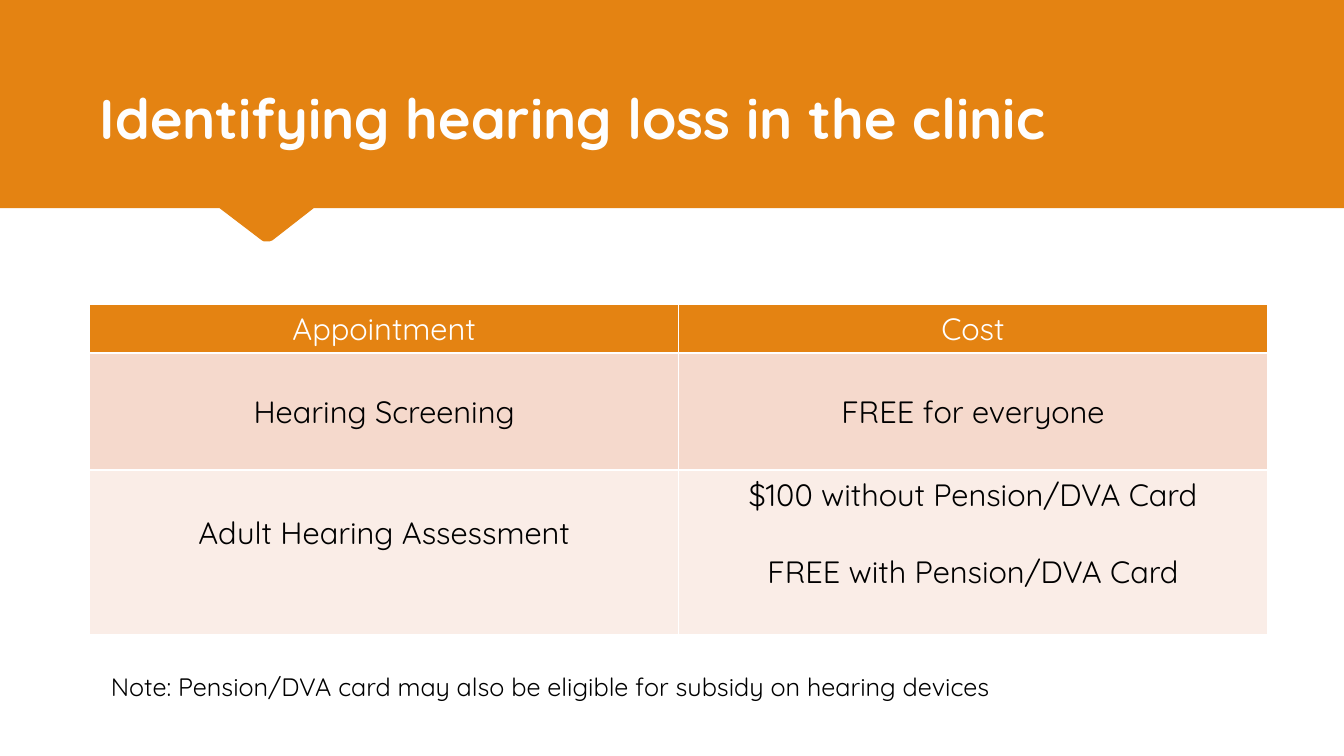
from dataclasses import dataclass

from pptx import Presentation
from pptx.dml.color import RGBColor
from pptx.enum.text import MSO_ANCHOR, MSO_AUTO_SIZE, PP_ALIGN
from pptx.slide import Slide
from pptx.table import _Cell
from pptx.text.text import _Paragraph
from pptx.util import Inches, Pt

ORANGE = RGBColor(0xE4, 0x83, 0x12)
PEACH = RGBColor(0xF5, 0xD9, 0xCC)
BLUSH = RGBColor(0xFA, 0xED, 0xE7)
WHITE = RGBColor(0xFF, 0xFF, 0xFF)
OFF_WHITE = RGBColor(0xFE, 0xFE, 0xFE)
BLACK = RGBColor(0x00, 0x00, 0x00)
FONT = "Quicksand"
LINE_GAP = Pt(27.5)

BANNER_OUTLINE = [
    (0, 0), (0, 2.06), (2.18, 2.06), (2.6, 2.38), (2.62, 2.39),
    (2.67, 2.39), (2.7, 2.38), (3.11, 2.06), (13.33, 2.06),
]


@dataclass(frozen=True)
class PriceRow:
    appointment: str
    cost: str
    height: float
    fill: RGBColor
    color: RGBColor = BLACK
    bottom_margin: float = 0.05


PRICE_ROWS = [
    PriceRow("Appointment", "Cost", 0.48, ORANGE, WHITE),
    PriceRow("Hearing Screening", "FREE for everyone", 1.16, PEACH),
    PriceRow(
        "Adult Hearing Assessment",
        "$100 without Pension/DVA Card\nFREE with Pension/DVA Card",
        1.63, BLUSH, bottom_margin=0.42,
    ),
]


def format_runs(paragraph: _Paragraph, size: float, color: RGBColor, bold: bool = False) -> None:
    for run in paragraph.runs:
        run.font.name = FONT
        run.font.size = Pt(size)
        run.font.bold = bold
        run.font.color.rgb = color


def add_banner(slide: Slide) -> None:
    builder = slide.shapes.build_freeform(Inches(13.33), 0)
    builder.add_line_segments([(Inches(x), Inches(y)) for x, y in BANNER_OUTLINE])
    banner = builder.convert_to_shape()
    banner.shadow.inherit = False
    banner.fill.solid()
    banner.fill.fore_color.rgb = ORANGE
    banner.line.color.rgb = ORANGE
    banner.line.width = Pt(0.75)
    slide.shapes.title.element.addprevious(banner.element)


def fill_title(slide: Slide) -> None:
    title = slide.shapes.title
    title.left, title.top = Inches(0.89), Inches(0.49)
    title.width, title.height = Inches(11.56), Inches(1.06)
    frame = title.text_frame
    frame.text = "Identifying hearing loss in the clinic"
    frame.auto_size = MSO_AUTO_SIZE.NONE
    frame.vertical_anchor = MSO_ANCHOR.BOTTOM
    frame.paragraphs[0].alignment = PP_ALIGN.LEFT
    format_runs(frame.paragraphs[0], 40, OFF_WHITE, bold=True)


def fill_cell(cell: _Cell, text: str, row: PriceRow) -> None:
    cell.text_frame.text = text
    cell.vertical_anchor = MSO_ANCHOR.MIDDLE
    cell.margin_bottom = Inches(row.bottom_margin)
    cell.fill.solid()
    cell.fill.fore_color.rgb = row.fill
    for index, paragraph in enumerate(cell.text_frame.paragraphs):
        paragraph.alignment = PP_ALIGN.CENTER
        if index:
            paragraph.space_before = LINE_GAP
        format_runs(paragraph, 22, row.color)


def add_price_table(slide: Slide) -> None:
    height = sum(row.height for row in PRICE_ROWS)
    prices = slide.shapes.add_table(
        len(PRICE_ROWS), 2, Inches(0.89), Inches(3.02), Inches(11.68), Inches(height)
    ).table
    for index, row in enumerate(PRICE_ROWS):
        prices.rows[index].height = Inches(row.height)
        fill_cell(prices.cell(index, 0), row.appointment, row)
        fill_cell(prices.cell(index, 1), row.cost, row)


def add_note(slide: Slide) -> None:
    note = slide.shapes.add_textbox(Inches(1), Inches(6.61), Inches(9.58), Inches(0.4))
    frame = note.text_frame
    frame.word_wrap = True
    frame.text = "Note: Pension/DVA card may also be eligible for subsidy on hearing devices"
    format_runs(frame.paragraphs[0], 18, BLACK)


def main() -> None:
    presentation = Presentation()
    presentation.slide_width = Inches(13.33)
    presentation.slide_height = Inches(7.5)
    slide = presentation.slides.add_slide(presentation.slide_layouts[5])
    add_banner(slide)
    fill_title(slide)
    add_price_table(slide)
    add_note(slide)
    presentation.save("out.pptx")


if __name__ == "__main__":
    main()
